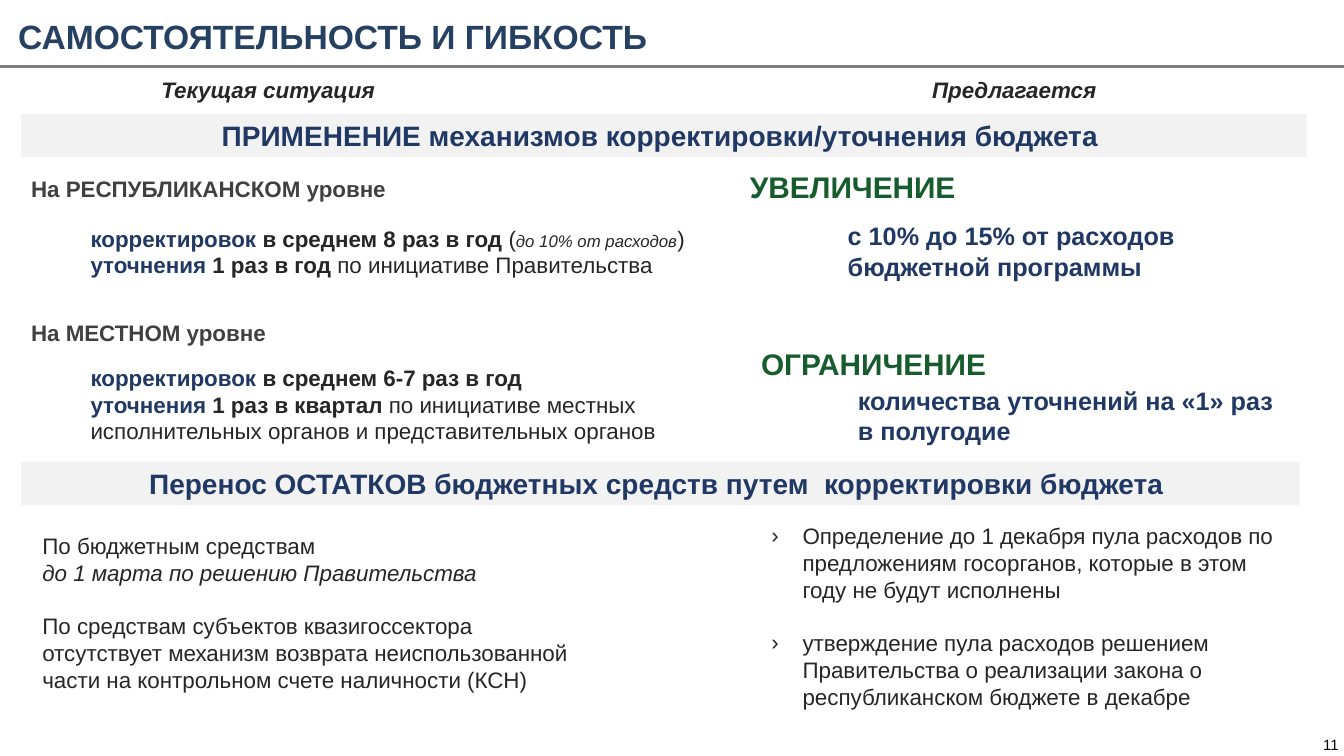
import pptx
import pptx.dml.color
import pptx.enum.shapes
import pptx.enum.text
import pptx.util
from lxml import etree
from pptx.oxml.ns import qn

Inches = pptx.util.Inches
Pt = pptx.util.Pt
RGBColor = pptx.dml.color.RGBColor
Align = pptx.enum.text.PP_ALIGN
Anchor = pptx.enum.text.MSO_ANCHOR

BLACK = RGBColor(0x00, 0x00, 0x00)
DARK = RGBColor(0x26, 0x26, 0x26)
GRAY = RGBColor(0x40, 0x40, 0x40)
RULE_GRAY = RGBColor(0x80, 0x80, 0x80)
BAND_GRAY = RGBColor(0xF2, 0xF2, 0xF2)
TITLE_BLUE = RGBColor(0x25, 0x40, 0x61)
NAVY = RGBColor(0x20, 0x38, 0x64)
GREEN = RGBColor(0x17, 0x5C, 0x2C)


def place(shape, left, top, width, height):
    shape.left, shape.top = Inches(left), Inches(top)
    shape.width, shape.height = Inches(width), Inches(height)


def format_paragraph(paragraph, size, color, bold=False, italic=False,
                     align=Align.LEFT, spacing=1.0, before=0, after=0):
    font = paragraph.font
    font.name, font.size, font.bold, font.italic = "Arial", Pt(size), bold, italic
    font.color.rgb = color
    paragraph.alignment = align
    paragraph.line_spacing = spacing
    paragraph.space_before, paragraph.space_after = Pt(before), Pt(after)


def set_text(shape, text, size, color, anchor=Anchor.TOP, **style):
    frame = shape.text_frame
    frame.word_wrap = True
    frame.auto_size = pptx.enum.text.MSO_AUTO_SIZE.NONE
    frame.vertical_anchor = anchor
    frame.text = text
    for paragraph in frame.paragraphs:
        format_paragraph(paragraph, size, color, **style)


def add_text(slide, box, text, size, color, **style):
    shape = slide.shapes.add_textbox(*map(Inches, box))
    set_text(shape, text, size, color, **style)
    return shape


def add_band(slide, top, width, text):
    band = slide.shapes.add_shape(
        pptx.enum.shapes.MSO_SHAPE.RECTANGLE,
        Inches(0.21), Inches(top), Inches(width), Inches(0.43))
    band.shadow.inherit = False
    band.fill.solid()
    band.fill.fore_color.rgb = BAND_GRAY
    band.line.fill.background()
    set_text(band, text, 20, NAVY, bold=True, align=Align.CENTER)


def add_rule(slide, top):
    rule = slide.shapes.add_connector(
        pptx.enum.shapes.MSO_CONNECTOR.STRAIGHT,
        Inches(0), Inches(top), Inches(13.33), Inches(top))
    rule.line.color.rgb = RULE_GRAY
    rule.line.width = Pt(2.25)
    etree.SubElement(rule._element.spPr, qn("a:effectLst"))


def add_frequency(slide, top, height, lines):
    """Each line is a blue term, a bold frequency and plain (text, size, italic) parts."""
    shape = slide.shapes.add_textbox(
        Inches(0.8), Inches(top), Inches(6.33), Inches(height))
    set_text(shape, "\n".join(term for term, _, _ in lines), 16, DARK)
    for paragraph, (_, frequency, details) in zip(shape.text_frame.paragraphs, lines):
        term_font = paragraph.runs[0].font
        term_font.bold = True
        term_font.color.rgb = NAVY
        frequency_run = paragraph.add_run()
        frequency_run.text = frequency
        frequency_run.font.bold = True
        for text, size, italic in details:
            run = paragraph.add_run()
            run.text = text
            run.font.size, run.font.italic = Pt(size), italic


def set_bullet(paragraph, character=None):
    properties = paragraph._p.get_or_add_pPr()
    indent = Inches(0.31) if character else 0
    properties.set("marL", str(indent))
    properties.set("indent", str(-indent))
    bullet = etree.Element(qn("a:buChar" if character else "a:buNone"))
    if character:
        bullet.set("char", character)
    properties.find(qn("a:defRPr")).addprevious(bullet)


def fill_list(placeholder, box, lines, gap_index, bullet=None):
    place(placeholder, *box)
    set_text(placeholder, "\n".join(lines), 16, DARK)
    for paragraph in placeholder.text_frame.paragraphs:
        set_bullet(paragraph, bullet)
    placeholder.text_frame.paragraphs[gap_index].space_before = Pt(19)


def main():
    presentation = pptx.Presentation()
    presentation.slide_width, presentation.slide_height = Inches(13.33), Inches(7.5)
    slide = presentation.slides.add_slide(presentation.slide_layouts[3])
    title, left_list, right_list = slide.placeholders

    # Title and rule
    place(title, 0.08, 0.15, 13.33, 0.46)
    set_text(title, "САМОСТОЯТЕЛЬНОСТЬ И ГИБКОСТЬ", 24, TITLE_BLUE,
             bold=True, spacing=0.9, after=2.7)
    add_rule(slide, 0.66)

    # Column headings
    for left, heading in ((0.43, "Текущая ситуация"), (7.83, "Предлагается")):
        add_text(slide, (left, 0.7, 4.46, 0.42), heading, 16, DARK, bold=True,
                 italic=True, align=Align.CENTER, anchor=Anchor.MIDDLE,
                 spacing=0.9, before=10)

    # Section bands
    add_band(slide, 1.13, 12.75,
             "ПРИМЕНЕНИЕ механизмов корректировки/уточнения бюджета ")
    add_band(slide, 4.58, 12.68,
             "Перенос ОСТАТКОВ бюджетных средств путем  корректировки бюджета ")

    # Current situation by level
    for top, level in ((1.69, "На РЕСПУБЛИКАНСКОМ уровне"), (3.12, "На МЕСТНОМ уровне")):
        add_text(slide, (0.21, top, 3.97, 0.37), level, 16, GRAY, bold=True)
    add_frequency(slide, 2.18, 0.64, [
        ("корректировок ", "в среднем 8 раз в год ",
         [("(", 16, False), ("до 10% от расходов", 12, True), (")", 16, False)]),
        ("уточнения ", "1 раз в год ", [("по инициативе Правительства", 16, False)]),
    ])
    add_frequency(slide, 3.56, 0.91, [
        ("корректировок ", "в среднем 6-7 раз в год", []),
        ("уточнения ", "1 раз в квартал ",
         [("по инициативе местных исполнительных органов и представительных органов",
           16, False)]),
    ])

    # Proposals
    for left, top, heading in ((7.34, 1.62, "УВЕЛИЧЕНИЕ"), (7.45, 3.38, "ОГРАНИЧЕНИЕ")):
        add_text(slide, (left, top, 2.8, 0.46), heading, 21.3, GREEN, bold=True)
    for box, proposal in (
            ((8.31, 2.14, 4.24, 0.71), "с 10% до 15% от расходов бюджетной программы"),
            ((8.41, 3.77, 4.39, 0.71), "количества уточнений на «1» раз в полугодие")):
        add_text(slide, box, proposal, 18, NAVY, bold=True)

    # Carry-over of balances
    fill_list(left_list, (0.32, 5.23, 5.77, 1.69), [
        "По бюджетным средствам",
        "до 1 марта по решению Правительства",
        "По средствам субъектов квазигоссектора",
        "отсутствует механизм возврата неиспользованной части "
        "на контрольном счете наличности (КСН)",
    ], gap_index=2)
    left_list.text_frame.paragraphs[1].font.italic = True
    fill_list(right_list, (7.55, 5.13, 5.41, 1.99), [
        "Определение до 1 декабря пула расходов по предложениям госорганов, "
        "которые в этом году не будут исполнены",
        "утверждение пула расходов решением Правительства о реализации закона "
        "о республиканском бюджете в декабре",
    ], gap_index=1, bullet="›")

    # Page number
    add_text(slide, (12.93, 7.27, 0.54, 0.24), "11", 10.7, BLACK,
             align=Align.CENTER, anchor=Anchor.MIDDLE)

    presentation.save("out.pptx")


if __name__ == "__main__":
    main()
